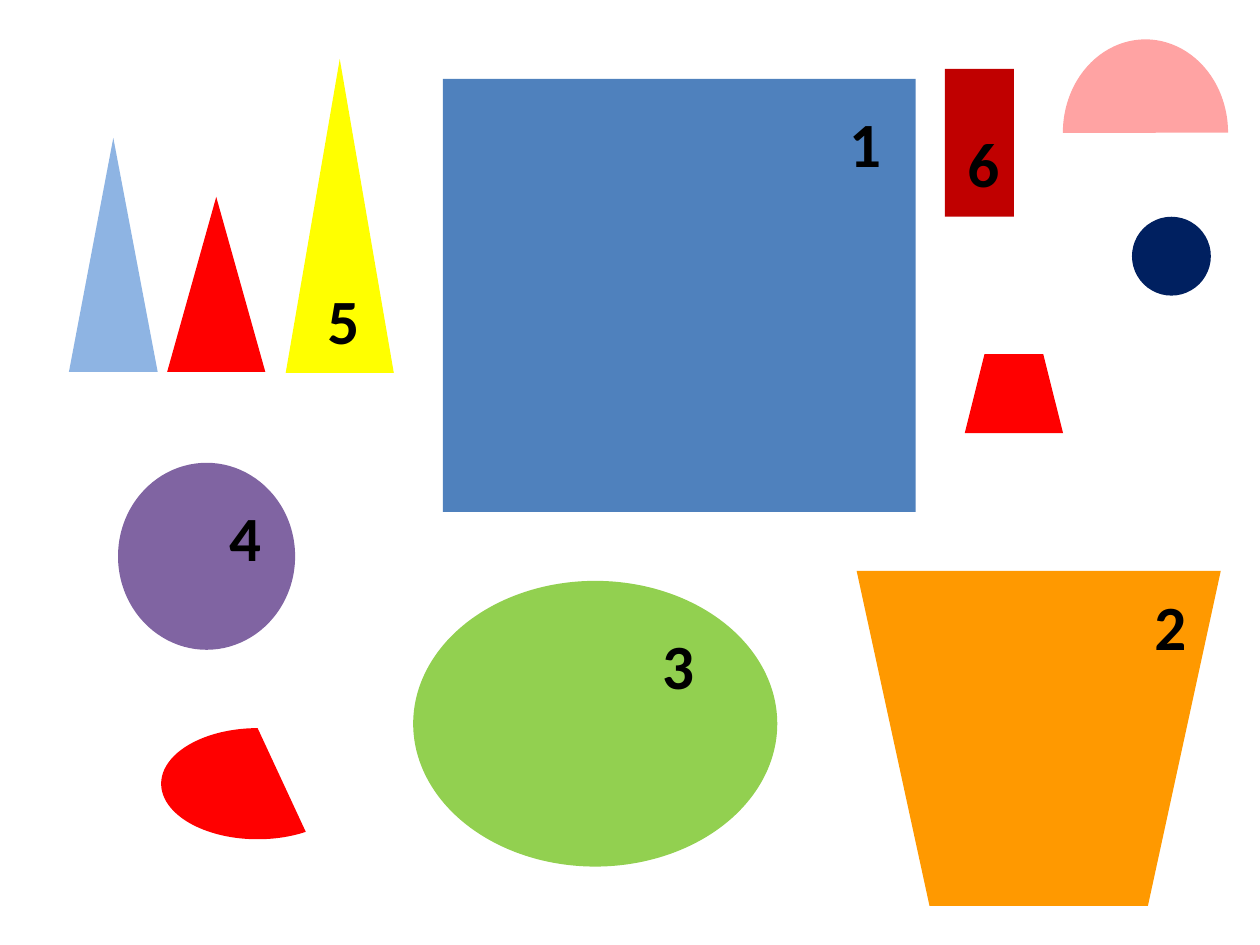
from pptx import Presentation
from pptx.dml.color import RGBColor
from pptx.enum.shapes import MSO_SHAPE
from pptx.enum.text import MSO_AUTO_SIZE
from pptx.util import Cm, Pt

BLACK = RGBColor(0x00, 0x00, 0x00)
RED = RGBColor(0xFF, 0x00, 0x00)
DARK_RED = RGBColor(0xC0, 0x00, 0x00)
PINK = RGBColor(0xFF, 0xA3, 0xA3)
ORANGE = RGBColor(0xFF, 0x99, 0x00)
YELLOW = RGBColor(0xFF, 0xFF, 0x00)
GREEN = RGBColor(0x92, 0xD0, 0x50)
LIGHT_BLUE = RGBColor(0x8E, 0xB4, 0xE3)
BLUE = RGBColor(0x4F, 0x81, 0xBD)
NAVY = RGBColor(0x00, 0x20, 0x60)
PURPLE = RGBColor(0x80, 0x64, 0xA2)

# Outline, colour, then left, top, width and height in cm
FIGURES = [
    (MSO_SHAPE.ISOSCELES_TRIANGLE, LIGHT_BLUE, 1.39, 2.78, 1.79, 4.72),
    (MSO_SHAPE.RECTANGLE, BLUE, 8.93, 1.59, 9.53, 8.73),
    (MSO_SHAPE.RECTANGLE, DARK_RED, 19.05, 1.39, 1.39, 2.98),
    (MSO_SHAPE.TRAPEZOID, RED, 19.45, 7.14, 1.98, 1.59),
    (MSO_SHAPE.FLOWCHART_MANUAL_OPERATION, ORANGE, 17.27, 11.51, 7.34, 6.75),
    (MSO_SHAPE.OVAL, GREEN, 8.33, 11.71, 7.34, 5.76),
    (MSO_SHAPE.ISOSCELES_TRIANGLE, RED, 3.37, 3.97, 1.98, 3.53),
    (MSO_SHAPE.OVAL, PURPLE, 2.38, 9.33, 3.57, 3.77),
    (MSO_SHAPE.CHORD, RED, 3.25, 14.68, 3.89, 2.24),
    (MSO_SHAPE.OVAL, NAVY, 22.82, 4.37, 1.59, 1.59),
    (MSO_SHAPE.ISOSCELES_TRIANGLE, YELLOW, 5.76, 1.19, 2.18, 6.33),
]
HALF_DISC = (MSO_SHAPE.CHORD, PINK, 21.21, 1.01, 3.76, 3.33)
HALF_DISC_ANGLES = (53.86, 162)

# Left and top of the numbers 1 to 6, in cm
NUMBER_CORNERS = [(16.87, 1.98), (23.02, 11.71), (13.1, 12.5),
                  (4.37, 9.92), (6.35, 5.56), (19.25, 2.38)]
NUMBER_FORMAT = {"name": "Calibri", "size": Pt(36), "bold": True}


def add_figure(slide, outline, colour, *frame):
    figure = slide.shapes.add_shape(outline, *map(Cm, frame))
    figure.shadow.inherit = False
    figure.fill.solid()
    figure.fill.fore_color.rgb = colour
    figure.line.fill.background()
    return figure


def add_number(slide, number, left, top):
    label = slide.shapes.add_textbox(Cm(left), Cm(top), Cm(1.17), Cm(1.8))
    label.text_frame.word_wrap = False
    label.text_frame.auto_size = MSO_AUTO_SIZE.SHAPE_TO_FIT_TEXT
    digit = label.text_frame.paragraphs[0].add_run()
    digit.text = str(number)
    for attribute, value in NUMBER_FORMAT.items():
        setattr(digit.font, attribute, value)
    digit.font.color.rgb = BLACK


def main():
    deck = Presentation()
    deck.slide_width, deck.slide_height = Cm(25.4), Cm(19.05)
    slide = deck.slides.add_slide(deck.slide_layouts[6])

    # Coloured figures
    for figure in FIGURES:
        add_figure(slide, *figure)

    # Half disc, turned to rest on its flat side
    half_disc = add_figure(slide, *HALF_DISC)
    half_disc.rotation = 90
    for index, angle in enumerate(HALF_DISC_ANGLES):
        half_disc.adjustments[index] = angle

    # Numbers on the figures
    for number, corner in enumerate(NUMBER_CORNERS, start=1):
        add_number(slide, number, *corner)

    deck.save("out.pptx")


if __name__ == "__main__":
    main()
